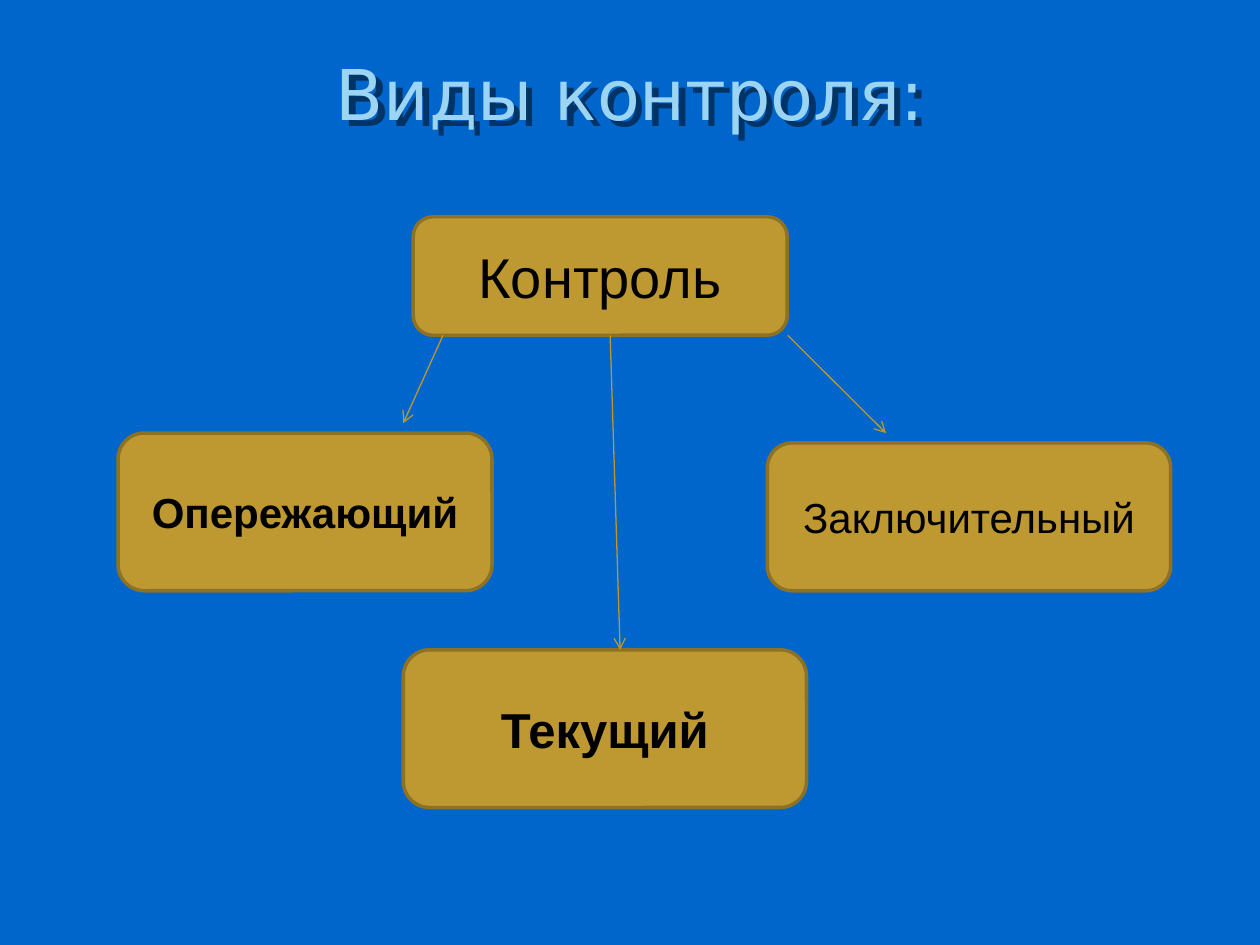
from lxml import etree
from pptx import Presentation
from pptx import util as u
from pptx.dml.color import RGBColor
from pptx.enum import shapes, text
from pptx.oxml.ns import qn

COLORS = {
    "background": "0066CC",
    "title": "9CD5F4",
    "shadow": "003366",
    "box": "BE9932",
    "border": "8D7125",
    "arrow": "BD972D",
    "text": "000000",
}


def rgb(name):
    return RGBColor.from_string(COLORS[name])


class Diagram:
    """Holds the style and the current slide; one method per kind of element."""

    title_font = "DejaVu Sans"
    body_font = "Arial"

    def __init__(self, slide):
        self.s = slide
        fill = slide.background.fill
        fill.solid()
        fill.fore_color.rgb = rgb("background")

    def label(self, sp, words, size, font, color, bold=False):
        tf = sp.text_frame
        tf.word_wrap = True
        tf.vertical_anchor = text.MSO_ANCHOR.MIDDLE
        tf.text = words
        p = tf.paragraphs[0]
        p.alignment = text.PP_ALIGN.CENTER
        r = p.runs[0]
        r.font.name = font
        r.font.size = u.Pt(size)
        r.font.bold = bold
        r.font.color.rgb = rgb(color)

    def title(self, words, x, y, w, h):
        sp = self.s.shapes.add_textbox(u.Cm(x), u.Cm(y), u.Cm(w), u.Cm(h))
        self.label(sp, words, 40, self.title_font, "title")
        # Hard shadow to the lower right of the letters
        effects = etree.SubElement(sp._element.spPr, qn("a:effectLst"))
        shadow = etree.SubElement(effects, qn("a:outerShdw"), dist=str(u.Cm(0.18)),
                                  dir="2700000", algn="ctr", rotWithShape="0")
        etree.SubElement(shadow, qn("a:srgbClr"), val=COLORS["shadow"])

    def box(self, words, x, y, w, h, size, bold=False):
        sp = self.s.shapes.add_shape(shapes.MSO_SHAPE.ROUNDED_RECTANGLE,
                                     u.Cm(x), u.Cm(y), u.Cm(w), u.Cm(h))
        sp.shadow.inherit = False
        sp.fill.solid()
        sp.fill.fore_color.rgb = rgb("box")
        sp.line.color.rgb = rgb("border")
        sp.line.width = u.Pt(2)
        self.label(sp, words, size, self.body_font, "text", bold)

    def arrow(self, x1, y1, x2, y2):
        sp = self.s.shapes.add_connector(shapes.MSO_CONNECTOR.STRAIGHT,
                                         u.Cm(x1), u.Cm(y1), u.Cm(x2), u.Cm(y2))
        sp.line.color.rgb = rgb("arrow")
        sp.line.width = u.Pt(0.75)
        spPr = sp._element.spPr
        etree.SubElement(spPr.find(qn("a:ln")), qn("a:tailEnd"), type="arrow")
        etree.SubElement(spPr, qn("a:effectLst"))


def main():
    prs = Presentation()
    prs.slide_width, prs.slide_height = u.Cm(25.4), u.Cm(19.05)
    d = Diagram(prs.slides.add_slide(prs.slide_layouts[6]))

    # Title
    d.title("Виды контроля:", 1.27, 0.76, 22.86, 2.21)

    # Root and the three kinds of control
    narrow, wide = 7.54, 8.13
    root_y, root_h = 4.37, 2.39
    d.box("Контроль", 8.33, root_y, narrow, root_h, 32)
    d.box("Опережающий", 2.38, 8.73, narrow, 3.18, 24, bold=True)
    d.box("Текущий", 8.13, 13.1, wide, 3.18, 28, bold=True)
    d.box("Заключительный", 15.47, 8.93, wide, 2.98, 24)

    # Arrows from the bottom edge of the root
    for x1, x2, y2 in [(8.93, 8.13, 8.53), (12.3, 12.5, 13.1), (15.88, 17.86, 8.73)]:
        d.arrow(x1, root_y + root_h, x2, y2)

    prs.save("out.pptx")


if __name__ == "__main__":
    main()
